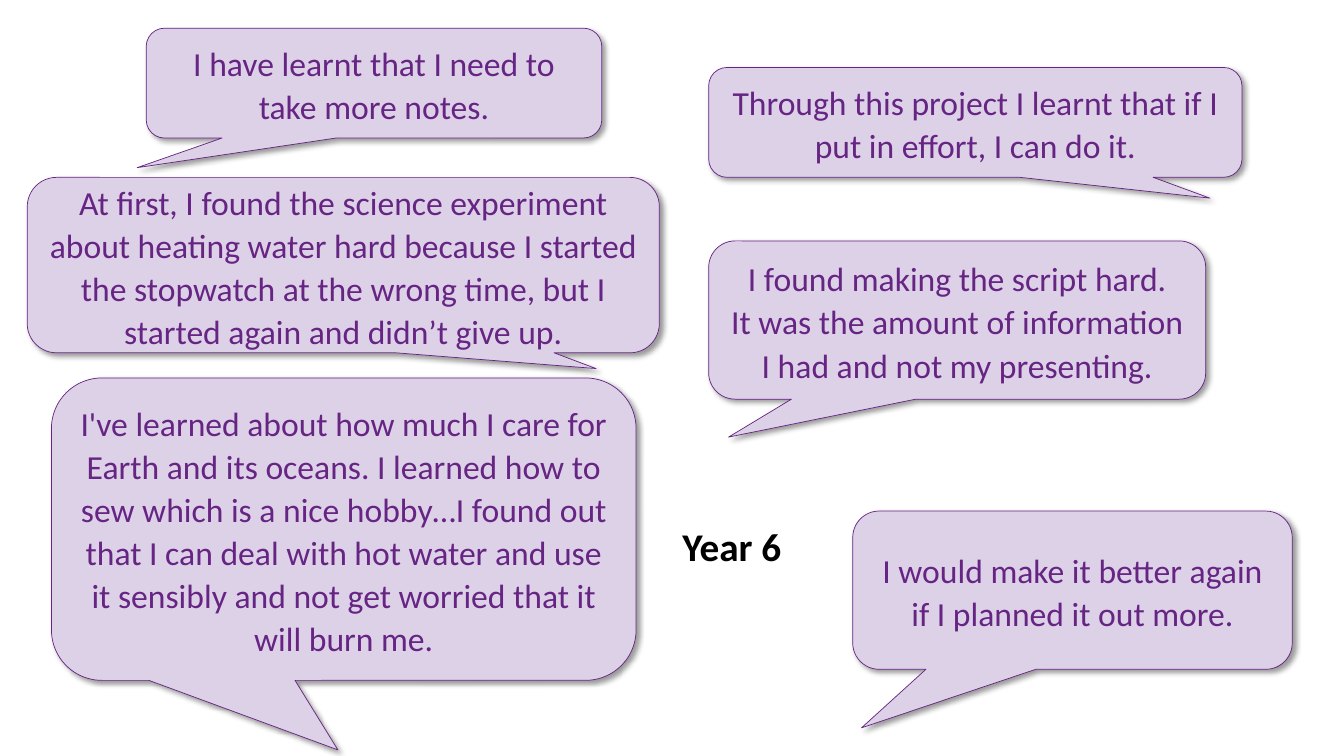
from lxml.etree import SubElement
from pptx import Presentation
from pptx.dml.color import RGBColor
from pptx.enum.shapes import MSO_SHAPE
from pptx.enum.text import MSO_ANCHOR, MSO_AUTO_SIZE, PP_ALIGN
from pptx.oxml.ns import qn
from pptx.util import Inches, Pt

COLORS = {"bubble": "DDD1E8", "purple": "662483", "black": "000000"}


def write_text(frame, text, size, color, bold=False, align=PP_ALIGN.LEFT,
               anchor=MSO_ANCHOR.TOP, spacing=1.0, wrap=True):
    frame.text = text
    frame.word_wrap = wrap
    frame.vertical_anchor = anchor
    for paragraph in frame.paragraphs:
        paragraph.alignment = align
        paragraph.line_spacing = spacing
        for run in paragraph.runs:
            run.font.name = "Calibri"
            run.font.size = Pt(size)
            run.font.bold = bold
            run.font.color.rgb = RGBColor.from_string(COLORS[color])


def add_shadow(shape, blur, distance, angle, opacity):
    shape.shadow.inherit = False
    effects = shape._element.spPr.find(qn("a:effectLst"))
    shadow = SubElement(effects, qn("a:outerShdw"), blurRad=str(Pt(blur)),
                        dist=str(Pt(distance)), dir=str(angle * 60000),
                        algn="tl", rotWithShape="0")
    shade = SubElement(shadow, qn("a:srgbClr"), val=COLORS["black"])
    SubElement(shade, qn("a:alpha"), val=str(opacity * 1000))


presentation = Presentation()
presentation.slide_width = Inches(13.33)
presentation.slide_height = Inches(7.5)
column = presentation.slide_width / 100
row = presentation.slide_height / 100
slide = presentation.slides.add_slide(presentation.slide_layouts[5])

title = slide.shapes.title
title.left, title.top = round(50.03 * column), round(68.4 * row)
title.width, title.height = round(9 * column), round(7.6 * row)
write_text(title.text_frame, "Year 6", size=28, color="black", bold=True, wrap=False)
title.text_frame.auto_size = MSO_AUTO_SIZE.SHAPE_TO_FIT_TEXT

bubbles = [
    (10.88, 3.73, 33.9, 14.53, -0.52, 0.77,
     "I have learnt that I need to take more notes."),
    (52.73, 31.87, 36.98, 20.93, -0.46, 0.74,
     "I found making the script hard.\n"
     "It was the amount of information I had and not my presenting."),
    (3.83, 50, 43.5, 40, -0.01, 0.73,
     "I've learned about how much I care for Earth and its oceans. "
     "I learned how to sew which is a nice hobby…I found out that I can deal "
     "with hot water and use it sensibly and not get worried that it will burn me."),
    (63.45, 67.6, 32.7, 20.93, -0.48, 0.87,
     "I would make it better again if I planned it out more."),
    (52.73, 8.93, 39.68, 14.53, 0.44, 0.69,
     "Through this project I learnt that if I put in effort, I can do it."),
    (2.03, 23.47, 47.03, 23.2, 0.4, 0.59,
     "At first, I found the science experiment about heating water hard because "
     "I started the stopwatch at the wrong time, but I started again and "
     "didn’t give up."),
]

for left, top, width, height, tail_x, tail_y, quote in bubbles:
    bubble = slide.shapes.add_shape(
        MSO_SHAPE.ROUNDED_RECTANGULAR_CALLOUT, round(left * column),
        round(top * row), round(width * column), round(height * row))
    bubble.adjustments[0] = tail_x
    bubble.adjustments[1] = tail_y
    bubble.fill.solid()
    bubble.fill.fore_color.rgb = RGBColor.from_string(COLORS["bubble"])
    bubble.line.color.rgb = RGBColor.from_string(COLORS["purple"])
    bubble.line.width = Pt(0.5)
    add_shadow(bubble, blur=4, distance=3, angle=45, opacity=40)
    write_text(bubble.text_frame, quote, size=24, color="purple",
               align=PP_ALIGN.CENTER, anchor=MSO_ANCHOR.MIDDLE, spacing=1.07)

presentation.save("out.pptx")
